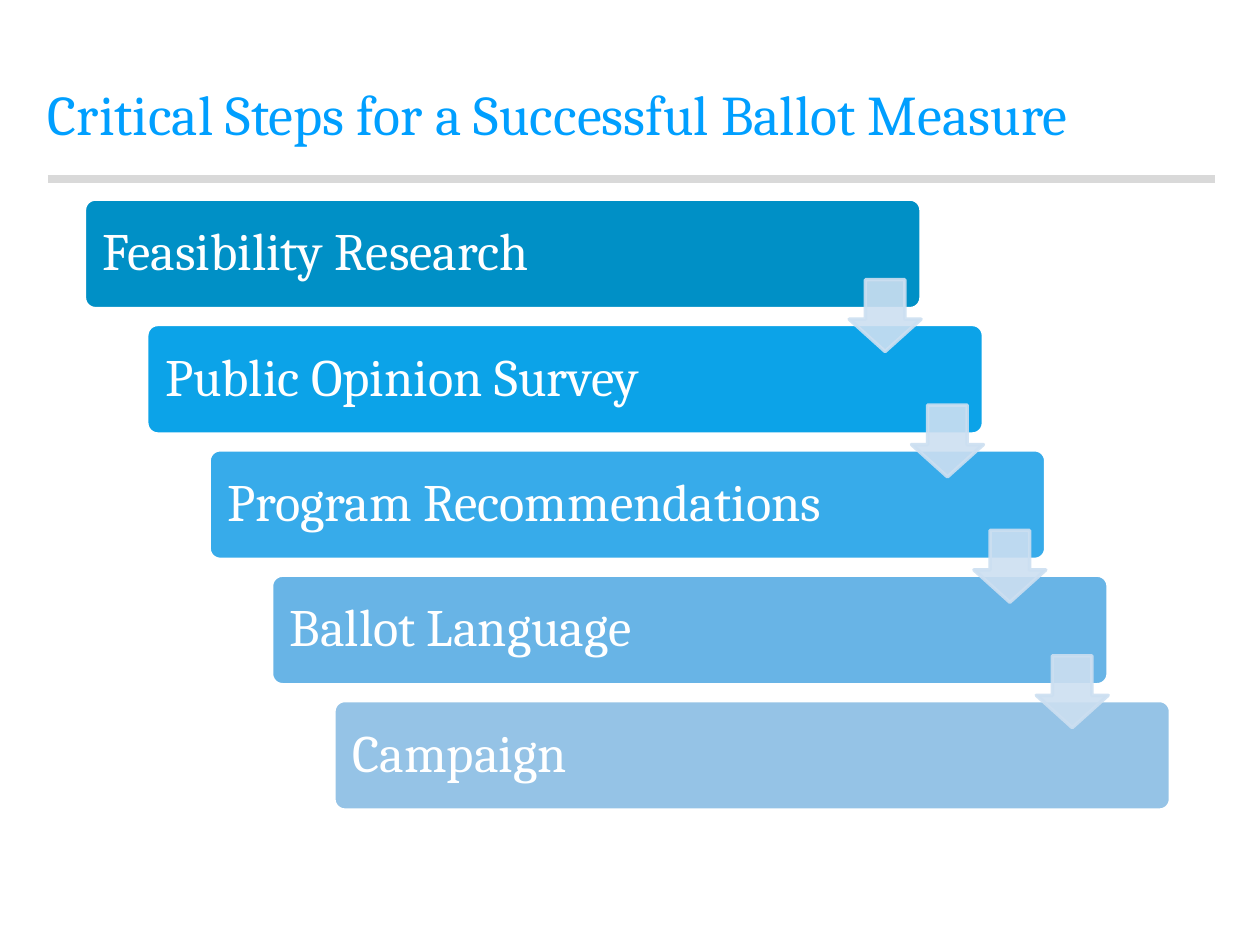
from dataclasses import dataclass

from lxml import etree
from pptx import Presentation
from pptx import util as u
from pptx.dml.color import RGBColor
from pptx.enum import shapes, text
from pptx.oxml.ns import qn


@dataclass(frozen=True)
class Theme:
    font: str = "Cambria"
    title_size: int = 32
    step_size: int = 30
    title: str = "009FFF"
    rule: str = "D9D9D9"
    white: str = "FFFFFF"
    arrow: str = "CCDFF1"


THEME = Theme()
STEPS = [
    ("Feasibility Research", "0090C6"),
    ("Public Opinion Survey", "0CA3E8"),
    ("Program Recommendations", "37ABEA"),
    ("Ballot Language", "68B4E6"),
    ("Campaign", "95C3E6"),
]
# Each step moves right and down by the same amount
STEP_DX, STEP_DY = 0.495, 0.995


def add_run(p, words, size, color):
    r = p.add_run()
    r.text = words
    r.font.name = THEME.font
    r.font.size = u.Pt(size)
    r.font.color.rgb = RGBColor.from_string(color)


def set_title(s, words):
    sp = s.shapes.title
    sp.left, sp.top = u.Inches(0.28), u.Inches(0.35)
    sp.width, sp.height = u.Inches(9.37), u.Inches(1.09)
    tf = sp.text_frame
    tf.auto_size = text.MSO_AUTO_SIZE.NONE
    tf.vertical_anchor = text.MSO_ANCHOR.MIDDLE
    p = tf.paragraphs[0]
    p.alignment = text.PP_ALIGN.LEFT
    add_run(p, words, THEME.title_size, THEME.title)


def add_rule(s):
    y = u.Inches(1.42)
    line = s.shapes.add_connector(
        shapes.MSO_CONNECTOR.STRAIGHT, u.Inches(0.38), y, u.Inches(9.64), y)
    line.line.color.rgb = RGBColor.from_string(THEME.rule)
    line.line.width = u.Pt(5)
    etree.SubElement(line._element.spPr, qn("a:effectLst"))


def add_block(s, kind, box, adjustments, fill, outline):
    sp = s.shapes.add_shape(kind, *(u.Inches(v) for v in box))
    for i, value in enumerate(adjustments):
        sp.adjustments[i] = value
    sp.shadow.inherit = False
    sp.fill.solid()
    sp.fill.fore_color.rgb = RGBColor.from_string(fill)
    sp.line.color.rgb = RGBColor.from_string(outline)
    sp.line.width = u.Pt(2)
    return sp


def add_step(s, i, words, color):
    box = (0.67 + i * STEP_DX, 1.58 + i * STEP_DY, 6.64, 0.87)
    sp = add_block(s, shapes.MSO_SHAPE.ROUNDED_RECTANGLE, box, [0.1],
                   color, THEME.white)
    tf = sp.text_frame
    tf.word_wrap = True
    tf.vertical_anchor = text.MSO_ANCHOR.MIDDLE
    tf.margin_left = tf.margin_right = u.Inches(0.12)
    tf.margin_top = tf.margin_bottom = u.Inches(0.12)
    p = tf.paragraphs[0]
    p.alignment = text.PP_ALIGN.LEFT
    p.line_spacing = 0.9
    add_run(p, words, THEME.step_size, THEME.white)


def add_arrow(s, i):
    box = (6.74 + i * STEP_DX, 2.22 + i * STEP_DY, 0.57, 0.57)
    sp = add_block(s, shapes.MSO_SHAPE.DOWN_ARROW, box, [0.55, 0.45],
                   THEME.arrow, THEME.arrow)
    # Fill and outline are 90% opaque
    for color in sp._element.spPr.iter(qn("a:srgbClr")):
        etree.SubElement(color, qn("a:alpha"), val="90000")


def main():
    prs = Presentation()
    prs.slide_width, prs.slide_height = u.Inches(10), u.Inches(7.5)
    s = prs.slides.add_slide(prs.slide_layouts[5])

    # Heading
    set_title(s, "Critical Steps for a Successful Ballot Measure")
    add_rule(s)

    # Staircase of steps, then the arrows that join them
    for i, (words, color) in enumerate(STEPS):
        add_step(s, i, words, color)
    for i in range(len(STEPS) - 1):
        add_arrow(s, i)

    prs.save("out.pptx")


if __name__ == "__main__":
    main()
